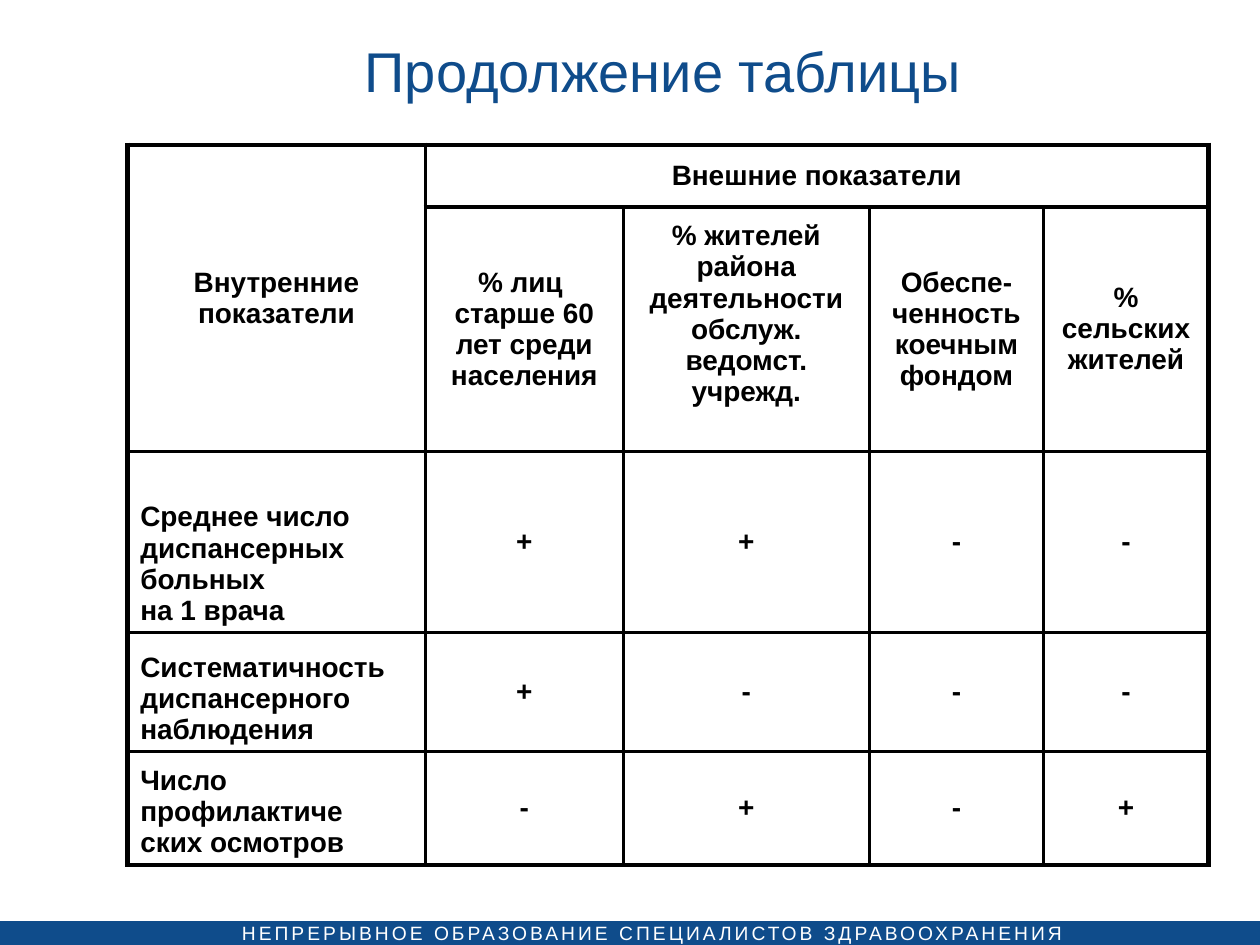
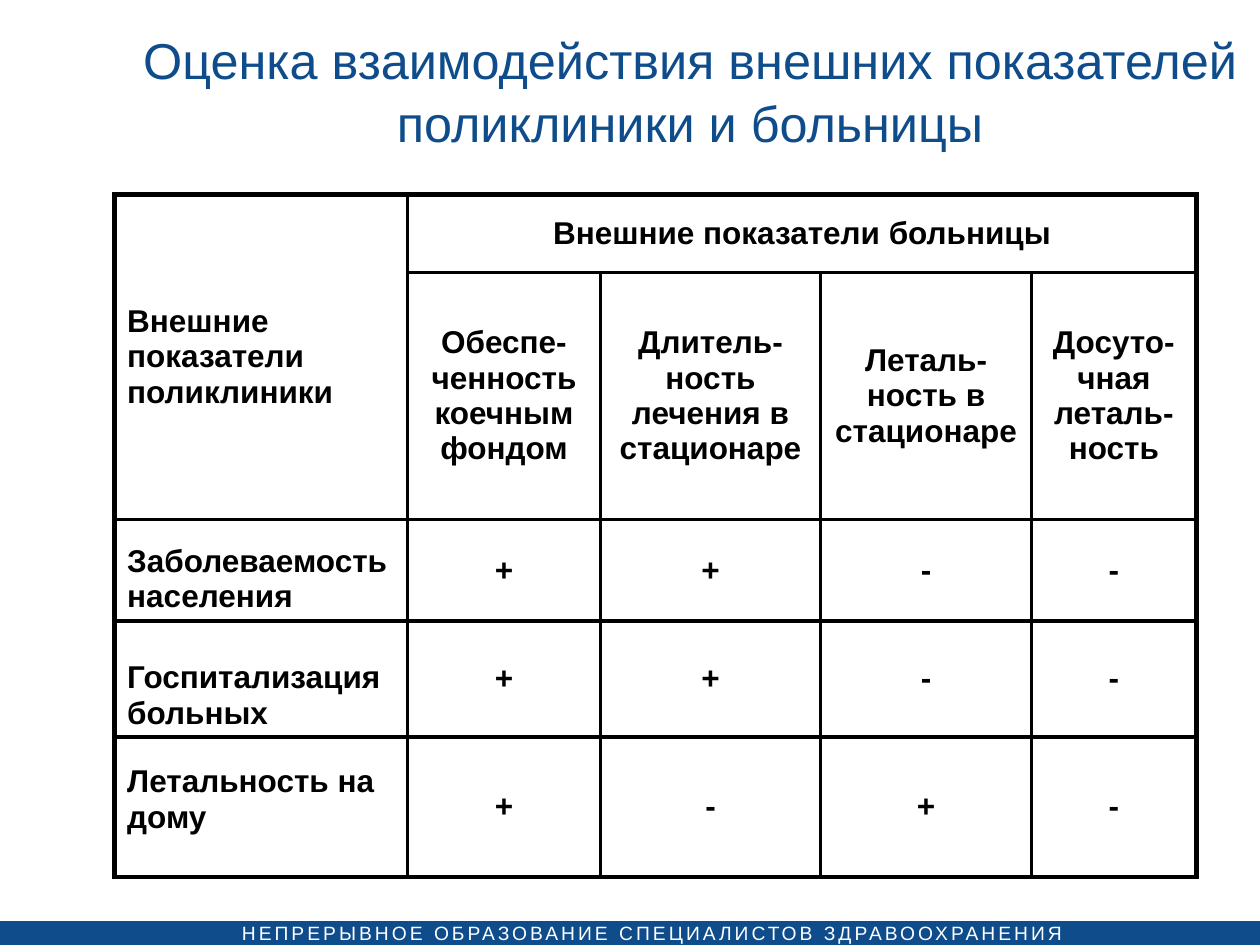
from dataclasses import dataclass

import pptx
import pptx.dml.color
import pptx.enum.shapes
import pptx.enum.text
import pptx.oxml
import pptx.oxml.ns
import pptx.util

Pt = pptx.util.Pt
Align = pptx.enum.text.PP_ALIGN
Anchor = pptx.enum.text.MSO_ANCHOR


@dataclass(frozen=True)
class Theme:
    font: str = "Arial"
    blue: str = "0F4C8B"
    white: str = "FFFFFF"
    black: str = "000000"
    footer_size: float = 11
    footer_tracking: int = 170  # hundredths of a point
    title_spacing: float = 1.04
    outer_line: float = 3
    inner_line: float = 2.25
    margin_x: float = 7.2
    margin_y: float = 3.6


THEME = Theme()
FOOTER = "НЕПРЕРЫВНОЕ ОБРАЗОВАНИЕ СПЕЦИАЛИСТОВ ЗДРАВООХРАНЕНИЯ"


def colour(value):
    return pptx.dml.color.RGBColor.from_string(value)


def write(frame, lines, size, ink, align=Align.LEFT, bold=False):
    """Fill a text frame with one paragraph per line; return the runs."""
    runs = []
    for index, line in enumerate(lines):
        paragraph = frame.add_paragraph() if index else frame.paragraphs[0]
        paragraph.alignment = align
        run = paragraph.add_run()
        run.text = line
        run.font.name = THEME.font
        run.font.size = Pt(size)
        run.font.bold = bold
        run.font.color.rgb = colour(ink)
        runs.append(run)
    return runs


# Footer band and title
def add_footer(slide):
    band = slide.shapes.add_shape(
        pptx.enum.shapes.MSO_SHAPE.RECTANGLE, 0, Pt(526.3), Pt(720), Pt(13.7))
    band.shadow.inherit = False
    band.fill.solid()
    band.fill.fore_color.rgb = colour(THEME.blue)
    band.line.fill.background()

    box = slide.shapes.add_textbox(Pt(138.25), Pt(526.3), Pt(477.5), Pt(13.7))
    frame = box.text_frame
    frame.margin_left = frame.margin_right = 0
    frame.margin_top = frame.margin_bottom = 0
    frame.word_wrap = False
    for run in write(frame, [FOOTER], THEME.footer_size, THEME.white):
        run.font._element.set("spc", str(THEME.footer_tracking))


def add_title(slide, text, top, width, size):
    box = slide.shapes.add_textbox(Pt(70.5), Pt(top), Pt(width), Pt(60))
    frame = box.text_frame
    frame.word_wrap = True
    frame.vertical_anchor = Anchor.MIDDLE
    write(frame, [text], size, THEME.blue, Align.CENTER)
    frame.paragraphs[0].line_spacing = THEME.title_spacing


# Table
def add_border(cell, edge, width):
    properties = cell._tc.get_or_add_tcPr()
    properties.append(pptx.oxml.parse_xml(
        f'<a:{edge} {pptx.oxml.ns.nsdecls("a")} w="{Pt(width)}">'
        f'<a:solidFill><a:srgbClr val="{THEME.black}"/></a:solidFill>'
        f'</a:{edge}>'))


def style_cell(cell, row, column, last_row, last_column):
    right = column + (cell.span_width if cell.is_merge_origin else 1) - 1
    bottom = row + (cell.span_height if cell.is_merge_origin else 1) - 1
    outer_edges = {"lnL": column == 0, "lnR": right == last_column,
                   "lnT": row == 0, "lnB": bottom == last_row}
    for edge, is_outer in outer_edges.items():
        add_border(cell, edge, THEME.outer_line if is_outer else THEME.inner_line)
    cell.fill.background()
    cell.margin_left = cell.margin_right = Pt(THEME.margin_x)
    cell.margin_top = cell.margin_bottom = Pt(THEME.margin_y)


def add_indicator_table(slide, left, top, widths, heights, size, corner,
                        corner_align, heading, columns, rows):
    """Table with a two-level header; rows pair a label with its +/- marks."""
    table = slide.shapes.add_table(
        len(heights), len(widths), Pt(left), Pt(top),
        Pt(sum(widths)), Pt(sum(heights))).table
    table.first_row = table.horz_banding = False
    for column, width in zip(table.columns, widths):
        column.width = Pt(width)
    for row, height in zip(table.rows, heights):
        row.height = Pt(height)
    table.cell(0, 0).merge(table.cell(1, 0))
    table.cell(0, 1).merge(table.cell(0, len(widths) - 1))

    for row in range(len(heights)):
        for column in range(len(widths)):
            style_cell(table.cell(row, column), row, column,
                       len(heights) - 1, len(widths) - 1)

    def fill_cell(row, column, text, align=Align.CENTER, anchor=Anchor.MIDDLE):
        cell = table.cell(row, column)
        cell.vertical_anchor = anchor
        write(cell.text_frame, text.split("\n"), size, THEME.black, align, True)

    fill_cell(0, 0, corner, corner_align)
    fill_cell(0, 1, heading)
    for column, text in enumerate(columns, start=1):
        fill_cell(1, column, text)
    for row, (label, marks) in enumerate(rows, start=2):
        fill_cell(row, 0, label, Align.LEFT, Anchor.BOTTOM)
        for column, mark in enumerate(marks, start=1):
            fill_cell(row, column, mark)
    return table


def lift_text(table, row, column, height):
    table.cell(row, column).margin_bottom = Pt(THEME.margin_y + height)


def add_slide(presentation):
    slide = presentation.slides.add_slide(presentation.slide_layouts[6])
    add_footer(slide)
    return slide


def main():
    presentation = pptx.Presentation()
    presentation.slide_width = Pt(720)
    presentation.slide_height = Pt(540)

    # Internal against external indicators
    slide = add_slide(presentation)
    add_title(slide, "Продолжение таблицы", 9.5, 617, 32)
    table = add_indicator_table(
        slide, 73, 82.8, [170, 113.2, 140.6, 99.6, 94.2],
        [35.4, 131.6, 103.4, 68, 64.8], 16,
        "Внутренние показатели", Align.CENTER, "Внешние показатели",
        ["% лиц \nстарше 60 лет среди населения",
         "% жителей района деятельности обслуж. ведомст. учрежд.",
         "Обеспе-ченность коечным фондом",
         "% сельских жителей"],
        [("Среднее число диспансерных больных\nна 1 врача", "++--"),
         ("Систематичность диспансерного наблюдения", "+---"),
         ("Число профилактиче\nских осмотров", "-+-+")])
    lift_text(table, 1, 2, 17.5)

    # Outpatient against hospital indicators
    slide = add_slide(presentation)
    add_title(slide, "Оценка взаимодействия внешних показателей поликлиники и больницы",
              21, 648, 28.8)
    table = add_indicator_table(
        slide, 65.5, 111.3, [167.5, 110, 126, 120.4, 94.2],
        [44.5, 141, 58, 66.4, 80], 18,
        "Внешние\nпоказатели\nполиклиники", Align.LEFT,
        "Внешние показатели больницы",
        ["Обеспе-ченность коечным фондом",
         "Длитель-ность лечения в стационаре",
         "Леталь-ность в стационаре",
         "Досуто-чная леталь-ность"],
        [("Заболеваемость населения", "++--"),
         ("Госпитализация больных", "++--"),
         ("Летальность на дому", "+-+-")])
    lift_text(table, 4, 0, 20.5)

    presentation.save("out.pptx")


if __name__ == "__main__":
    main()
